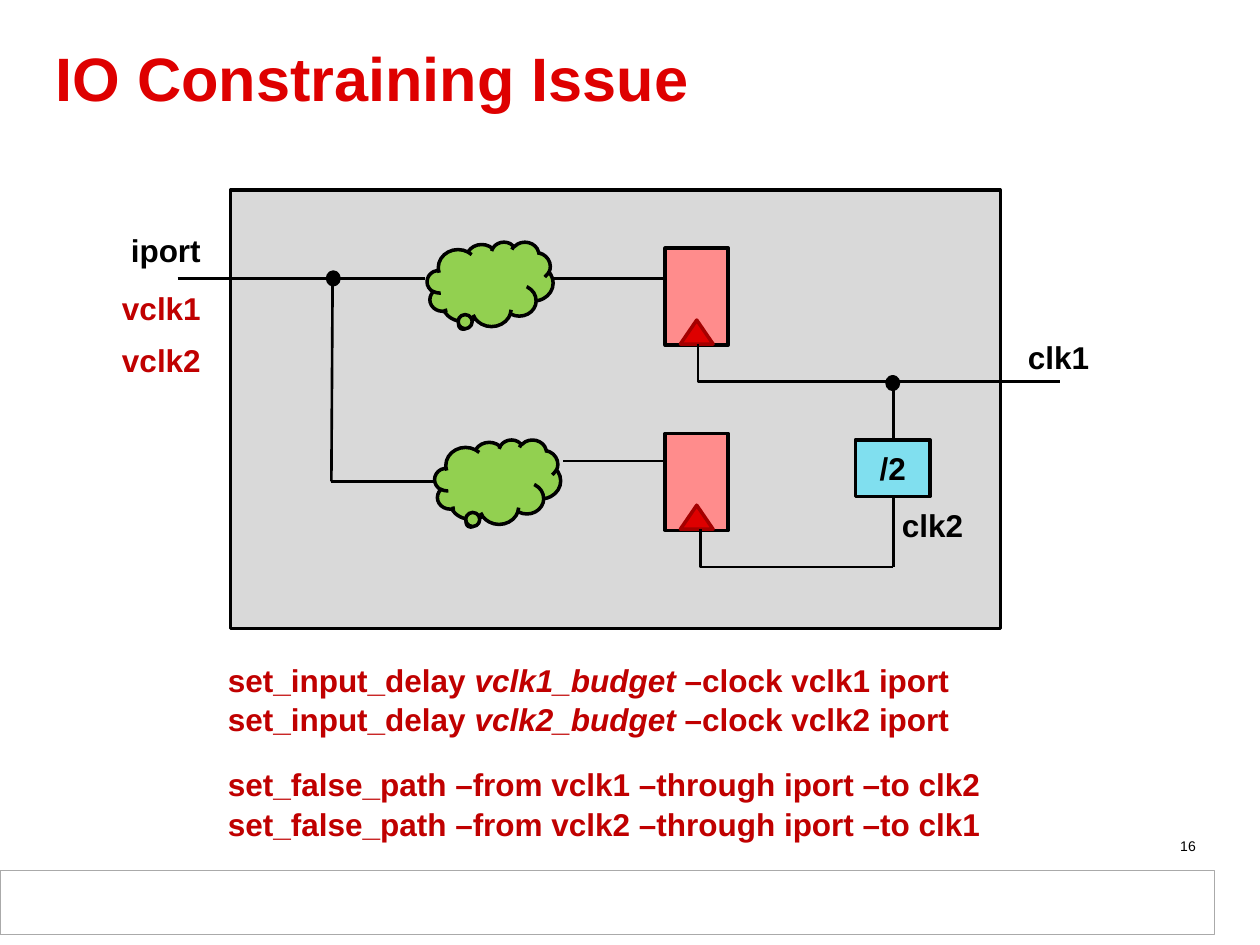
from collections import namedtuple
from dataclasses import dataclass

from lxml import etree
from pptx import Presentation
from pptx.dml.color import RGBColor
from pptx.enum.shapes import MSO_CONNECTOR, MSO_SHAPE
from pptx.enum.text import MSO_ANCHOR, PP_ALIGN
from pptx.oxml.ns import qn
from pptx.util import Inches, Pt

Box = namedtuple("Box", "left top width height")


@dataclass(frozen=True)
class Theme:
    font: str = "Arial"
    title_size: float = 35
    text_size: float = 18
    number_size: float = 8
    red: str = "DE0000"
    dark_red: str = "A40000"
    command: str = "C00000"
    black: str = "000000"
    white: str = "FFFFFF"
    block: str = "D9D9D9"
    register: str = "FF8C8C"
    cloud: str = "92D050"
    divider: str = "80DFEF"
    rule: str = "AAAAAA"
    outline: float = 2
    wire: float = 1.5


THEME = Theme()


def inside(outer, left, top, width, height):
    """Turn a place measured from the corner of outer into a page box."""
    return Box(outer.left + left, outer.top + top, width, height)


def lengths(box):
    return [Inches(value) for value in box]


def style_span(span, color, size=THEME.text_size, bold=True, italic=False):
    values = {"name": THEME.font, "size": Pt(size), "bold": bold, "italic": italic}
    for name, value in values.items():
        setattr(span.font, name, value)
    span.font.color.rgb = RGBColor.from_string(color)


def write(para, text, color, **formats):
    span = para.add_run()
    span.text = text
    style_span(span, color, **formats)


def add_part(page, kind, box, fill, line=THEME.black, width=THEME.outline):
    part = page.shapes.add_shape(kind, *lengths(box))
    part.shadow.inherit = False
    part.fill.solid()
    part.fill.fore_color.rgb = RGBColor.from_string(fill)
    part.line.color.rgb = RGBColor.from_string(line)
    part.line.width = Pt(width)
    return part


def add_wire(page, box, start, end, kind=MSO_CONNECTOR.STRAIGHT):
    points = [Inches(box[axis] + point[axis]) for point in (start, end) for axis in (0, 1)]
    wire = page.shapes.add_connector(kind, *points)
    wire.line.color.rgb = RGBColor.from_string(THEME.black)
    wire.line.width = Pt(THEME.wire)
    properties = wire._element.spPr
    etree.SubElement(properties, qn("a:effectLst"))
    if kind == MSO_CONNECTOR.ELBOW:
        # Run the full width before turning
        guides = properties.find(qn("a:prstGeom")).get_or_add_avLst()
        etree.SubElement(guides, qn("a:gd"), name="adj1", fmla="val 100000")


def add_label(page, box, text, color):
    frame = page.shapes.add_textbox(*lengths(box)).text_frame
    frame.word_wrap = False
    para = frame.paragraphs[0]
    para.line_spacing = 1.05
    write(para, text, color)


def add_title(page, box, text):
    title = page.shapes.title
    for name, value in zip(("left", "top", "width", "height"), lengths(box)):
        setattr(title, name, value)
    frame = title.text_frame
    frame.vertical_anchor = MSO_ANCHOR.MIDDLE
    para = frame.paragraphs[0]
    para.alignment = PP_ALIGN.LEFT
    para.line_spacing = 0.85
    write(para, text, THEME.red, size=THEME.title_size)


def add_register(page, box):
    add_part(page, MSO_SHAPE.RECTANGLE, box, THEME.register)
    clock_pin = inside(box, 0.12, box.height - 0.2, 0.26, 0.19)
    add_part(page, MSO_SHAPE.ISOSCELES_TRIANGLE, clock_pin, THEME.red, THEME.dark_red)


def add_circuit(page, box):
    add_part(page, MSO_SHAPE.RECTANGLE, box, THEME.block)

    # Registers and logic clouds
    for top in (0.46, 1.93):
        add_register(page, inside(box, 3.45, top, 0.5, 0.77))
    for left, top in ((1.62, 1.98), (1.56, 0.41)):
        cloud = add_part(page, MSO_SHAPE.CLOUD_CALLOUT,
                         inside(box, left, top, 1, 0.67), THEME.cloud)
        cloud.adjustments[0] = -0.208
        cloud.adjustments[1] = 0.468

    # Data wires, then clock wires
    straight = [
        ((-0.42, 0.7), (1.54, 0.7)),
        ((0.81, 0.7), (0.8, 2.31)),
        ((0.8, 2.31), (1.63, 2.31)),
        ((2.54, 0.7), (3.46, 0.7)),
        ((2.64, 2.15), (3.46, 2.15)),
        ((5.26, 1.52), (5.26, 2.99)),
    ]
    for start, end in straight:
        add_wire(page, box, start, end)
    for start, end in (((6.58, 1.52), (3.71, 1.22)), ((5.26, 2.99), (3.73, 2.69))):
        add_wire(page, box, start, end, MSO_CONNECTOR.ELBOW)

    # Junction dots
    for left, top in ((0.77, 0.65), (5.21, 1.48)):
        add_part(page, MSO_SHAPE.FLOWCHART_CONNECTOR,
                 inside(box, left, top, 0.09, 0.1), THEME.black)

    # Clock divider
    divider = add_part(page, MSO_SHAPE.RECTANGLE,
                       inside(box, 4.96, 1.98, 0.59, 0.45), THEME.divider)
    divider.text_frame.vertical_anchor = MSO_ANCHOR.MIDDLE
    para = divider.text_frame.paragraphs[0]
    para.alignment = PP_ALIGN.CENTER
    write(para, "/2", THEME.black)

    # Port and clock names
    labels = [
        ("iport", -0.89, 0.26, 0.76, THEME.black),
        ("vclk1", -0.96, 0.72, 0.83, THEME.command),
        ("vclk2", -0.96, 1.13, 0.83, THEME.command),
        ("clk1", 6.23, 1.11, 0.69, THEME.black),
        ("clk2", 5.23, 2.44, 0.69, THEME.black),
    ]
    for text, left, top, width, color in labels:
        add_label(page, inside(box, left, top, width, 0.4), text, color)


def add_commands(page, box, lines):
    """Write one paragraph per line; every second piece is italic."""
    frame = page.shapes.add_textbox(*lengths(box)).text_frame
    frame.word_wrap = True
    for index, pieces in enumerate(lines):
        para = frame.add_paragraph() if index else frame.paragraphs[0]
        para.line_spacing = 1.05
        for place, text in enumerate(pieces):
            write(para, text, THEME.command, italic=place % 2 == 1)


def add_footer(page, box, number):
    add_part(page, MSO_SHAPE.RECTANGLE, box, THEME.white, THEME.rule, 0.75)
    number_box = inside(box, 7.26, -0.31, 2.33, 0.23)
    para = page.shapes.add_textbox(*lengths(number_box)).text_frame.paragraphs[0]
    para.alignment = PP_ALIGN.RIGHT
    write(para, number, THEME.black, size=THEME.number_size, bold=False)


def main():
    deck = Presentation()
    deck.slide_width, deck.slide_height = Inches(10), Inches(7.5)
    page = deck.slides.add_slide(deck.slide_layouts[5])

    add_footer(page, Box(0, 6.91, 9.64, 0.51), "16")
    add_title(page, Box(0.34, 0.32, 9.25, 0.67), "IO Constraining Issue")
    add_circuit(page, Box(1.83, 1.51, 6.11, 3.48))
    add_commands(page, Box(1.71, 5.18, 6.35, 0.71), [
        ("set_input_delay ", f"{clock}_budget", f" –clock {clock} iport")
        for clock in ("vclk1", "vclk2")])
    add_commands(page, Box(1.71, 6.01, 6.35, 0.71), [
        (f"set_false_path –from {source} –through iport –to {target}",)
        for source, target in (("vclk1", "clk2"), ("vclk2", "clk1"))])
    deck.save("out.pptx")


if __name__ == "__main__":
    main()
